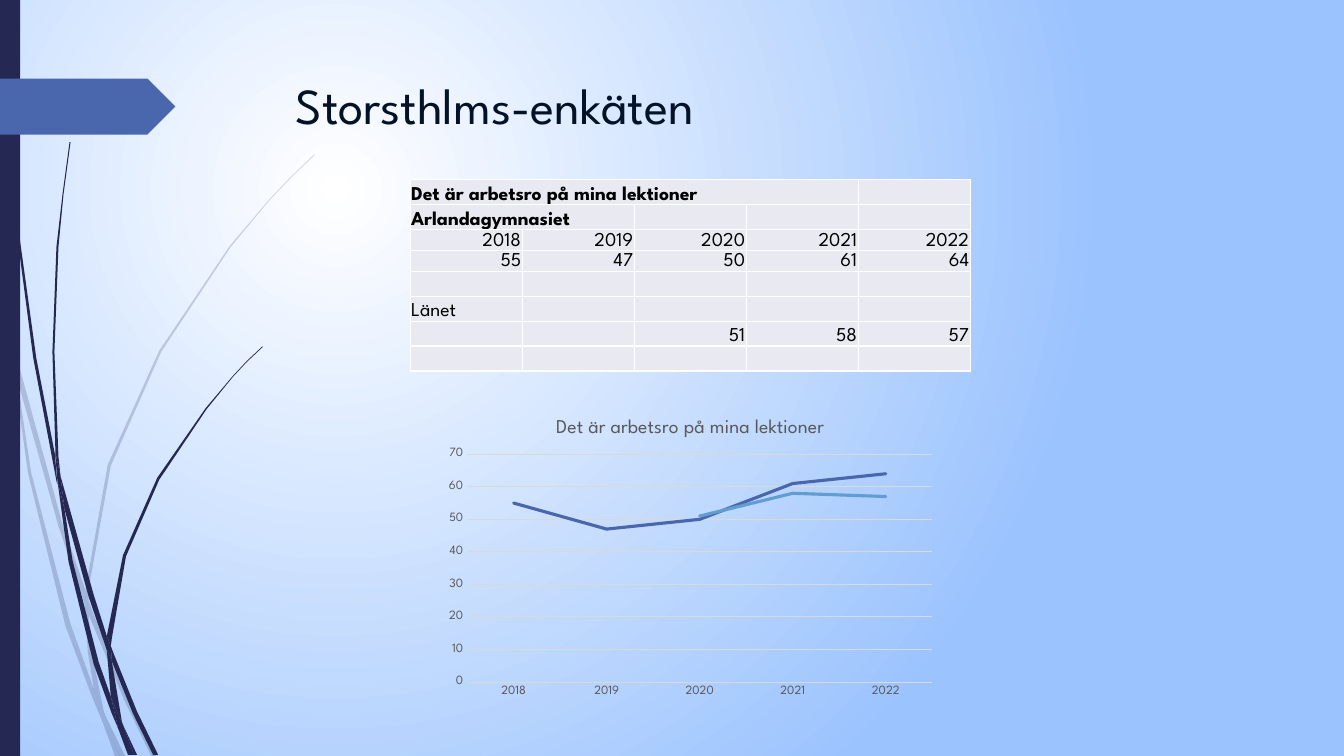
from lxml import etree
from pptx import Presentation
from pptx.chart.data import CategoryChartData
from pptx.dml.color import RGBColor
from pptx.enum.chart import XL_CHART_TYPE, XL_TICK_MARK
from pptx.enum.shapes import MSO_SHAPE
from pptx.enum.text import MSO_ANCHOR, MSO_AUTO_SIZE, PP_ALIGN
from pptx.oxml.ns import qn
from pptx.util import Pt

LEFT, RIGHT = PP_ALIGN.LEFT, PP_ALIGN.RIGHT
TOP, BOTTOM = MSO_ANCHOR.TOP, MSO_ANCHOR.BOTTOM
NO_TICK = XL_TICK_MARK.NONE

# Content
TITLE = "Storsthlms-enkäten"
QUESTION = "Det är arbetsro på mina lektioner"
SCHOOL, COUNTY = "Arlandagymnasiet", "Länet"
YEARS = ["2018", "2019", "2020", "2021", "2022"]
SCORES = {SCHOOL: [55, 47, 50, 61, 64], COUNTY: [None, None, 51, 58, 57]}
EMPTY = [None] * len(YEARS)
ROWS = [[QUESTION] + EMPTY[1:], [SCHOOL] + EMPTY[1:], YEARS, SCORES[SCHOOL],
        EMPTY, [COUNTY] + EMPTY[1:], SCORES[COUNTY], EMPTY]
MERGED = {0: 3, 1: 1}  # row: last column of its heading
BOLD_ROWS = (0, 1)
NUMBER_ROWS = (2, 3, 6)
COMPACT_ROWS = (2, 3)
PLOT = {"x": 20.5, "y": 37.2, "w": 332.3, "h": 162.8}

# Blades of grass: outline corners, in grass units
GRASS_UNIT = Pt(0.72)
PALE_BLADES = [
    [(11, 350), (9, 322), (0, 282), (0, 299), (10, 344)],
    [(58, 522), (84, 599), (85, 586), (62, 520), (14, 345), (17, 376)],
    [(92, 607), (88, 596), (88, 610), (123, 694), (150, 750), (155, 750), (127, 692)],
    [(119, 750), (124, 750), (105, 711)],
    [(93, 683), (70, 619), (31, 469), (17, 376), (11, 350), (28, 470), (65, 621),
     (92, 693), (101, 714), (99, 707)],
    [(84, 599), (87, 646), (93, 683), (96, 692), (105, 711), (103, 706), (91, 646),
     (88, 610), (88, 608)],
    [(88, 584), (110, 462), (160, 349), (229, 245), (268, 198), (290, 175),
     (312, 154), (312, 153), (289, 175), (268, 197), (228, 244), (158, 348),
     (107, 461), (85, 584), (85, 586), (88, 596)],
    [(101, 714), (114, 750), (119, 750)],
    [(88, 608), (88, 610), (88, 596), (85, 586), (84, 599)],
    [(96, 692), (93, 683), (99, 707), (101, 714), (119, 750), (105, 711)],
]
DARK_BLADES = [
    [(7, 110), (17, 233), (33, 355), (56, 477), (57, 481), (55, 457), (55, 453),
     (36, 355), (19, 232), (8, 109), (5, 48), (4, 0), (3, 0), (4, 48)],
    [(88, 592), (106, 645), (106, 633), (106, 631), (93, 590), (60, 472), (64, 505)],
    [(113, 649), (110, 641), (111, 656), (132, 708), (152, 749), (157, 749), (136, 706)],
    [(110, 691), (98, 657), (72, 556), (64, 505), (57, 477), (68, 557), (93, 659),
     (111, 708), (117, 722), (116, 717)],
    [(60, 472), (58, 453), (54, 349), (58, 245), (63, 193), (70, 141), (69, 141),
     (62, 193), (56, 245), (52, 349), (55, 449)],
    [(133, 749), (136, 749), (122, 719)],
    [(57, 477), (64, 505), (60, 472), (55, 449), (55, 453)],
    [(111, 633), (125, 552), (158, 476), (205, 406), (231, 374), (245, 359),
     (261, 344), (260, 344), (245, 358), (231, 373), (204, 405), (156, 474),
     (122, 551), (106, 631), (110, 641)],
    [(117, 722), (127, 749), (131, 749)],
    [(106, 645), (110, 691), (116, 706), (122, 719), (121, 716), (111, 656), (109, 651)],
    [(106, 645), (109, 651), (111, 656), (110, 641), (106, 631), (106, 633)],
    [(116, 706), (110, 691), (116, 717), (117, 722), (130, 749), (133, 749), (122, 719)],
]

THEME = {
    "font": "League Spartan",
    "title": "031227", "text": "000000", "muted": "595959",
    "navy": "242852", "blue": "4A66AC", "sky": "629DD1",
    "cell": "E9EAF1", "grid": "D9D9D9", "white": "FFFFFF", "edge": "9BC3FE",
    "title_size": 36, "table_size": 14, "chart_title_size": 14, "axis_size": 9,
}


def rgb(name):
    return RGBColor.from_string(THEME[name])


def set_font(font, size, color, bold=False):
    font.name, font.size, font.bold = THEME["font"], Pt(THEME[size]), bold
    font.color.rgb = rgb(color)


def write(tf, text, size="table_size", color="text", bold=False, align=LEFT):
    p = tf.paragraphs[0]
    p.alignment = align
    r = p.add_run()
    r.text = text
    set_font(r.font, size, color, bold)


def paint(sp, color, alpha=None):
    sp.shadow.inherit = False
    sp.fill.solid()
    sp.fill.fore_color.rgb = rgb(color)
    sp.line.fill.background()
    if alpha:
        clr = sp.fill._xPr.find(".//" + qn("a:srgbClr"))
        etree.SubElement(clr, qn("a:alpha"), val=str(alpha * 1000))


def add_borders(cell):
    tcPr = cell._tc.get_or_add_tcPr()
    for side in ("a:lnL", "a:lnR", "a:lnT", "a:lnB"):
        ln = etree.SubElement(tcPr, qn(side), w=str(Pt(1)))
        fill = etree.SubElement(ln, qn("a:solidFill"))
        etree.SubElement(fill, qn("a:srgbClr"), val=THEME["white"])


prs = Presentation()
prs.slide_width, prs.slide_height = Pt(960), Pt(540)
s = prs.slides.add_slide(prs.slide_layouts[5])

# Background glow
glow = s.background.fill
glow.gradient()
for stop, color in zip(glow.gradient_stops, ("white", "edge")):
    stop.color.rgb = rgb(color)
grad = s.element.find(".//" + qn("a:gradFill"))
grad.remove(grad.find(qn("a:lin")))
circle = etree.SubElement(grad, qn("a:path"), path="circle")
etree.SubElement(circle, qn("a:fillToRect"),
                 l="50000", t="50000", r="100000", b="100000")

# Grass, side bar and arrow tab
for blades, alpha in ((PALE_BLADES, 20), (DARK_BLADES, None)):
    for corners in blades:
        builder = s.shapes.build_freeform(*corners[0], scale=GRASS_UNIT)
        builder.add_line_segments(corners[1:], close=True)
        paint(builder.convert_to_shape(), "navy", alpha)
bar = s.shapes.add_shape(MSO_SHAPE.RECTANGLE, 0, 0, Pt(14.4), Pt(540))
paint(bar, "navy")
tab = s.shapes.add_shape(MSO_SHAPE.PENTAGON, 0, Pt(56.2), Pt(125.3), Pt(39.9))
paint(tab, "blue")

# Title
title = s.shapes.title
title.left, title.top, title.width, title.height = Pt(204), Pt(49), Pt(702), Pt(100.8)
tf = title.text_frame
tf.word_wrap, tf.auto_size, tf.vertical_anchor = True, MSO_AUTO_SIZE.NONE, TOP
write(tf, TITLE, "title_size", "title")

# Table
table = s.shapes.add_table(len(ROWS), len(YEARS), Pt(293), Pt(128.3),
                           Pt(400), Pt(137)).table
for column in table.columns:
    column.width = Pt(80)
for i, values in enumerate(ROWS):
    table.rows[i].height = Pt(14.9 if i in COMPACT_ROWS else 17.85)
    for j, value in enumerate(values):
        cell = table.cell(i, j)
        cell.margin_left = cell.margin_right = cell.margin_top = Pt(0.72)
        cell.margin_bottom = 0
        cell.vertical_anchor = BOTTOM
        add_borders(cell)
        cell.fill.solid()
        cell.fill.fore_color.rgb = rgb("cell")
        if value is None:
            etree.SubElement(cell.text_frame.paragraphs[0]._p,
                             qn("a:endParaRPr"), sz=str(THEME["table_size"] * 100))
        else:
            write(cell.text_frame, str(value), bold=i in BOLD_ROWS,
                  align=RIGHT if i in NUMBER_ROWS else LEFT)
for i, last in MERGED.items():
    table.cell(i, 0).merge(table.cell(i, last))

# Line chart
data = CategoryChartData()
data.categories = YEARS
for name, values in SCORES.items():
    data.add_series(name, values)
chart_w, chart_h = 360, 216
chart = s.shapes.add_chart(XL_CHART_TYPE.LINE, Pt(313.2), Pt(287.3),
                           Pt(chart_w), Pt(chart_h), data).chart
chart.has_legend = False
chart.has_title = True
write(chart.chart_title.text_frame, QUESTION, "chart_title_size", "muted")
chart.chart_title.include_in_layout = False
for series, color in zip(chart.plots[0].series, ("blue", "sky")):
    series.smooth = False
    series.format.line.width = Pt(2.25)
    series.format.line.color.rgb = rgb(color)
    series.format.line._get_or_add_ln().set("cap", "rnd")
years, scale = chart.category_axis, chart.value_axis
for axis in (years, scale):
    axis.major_tick_mark = axis.minor_tick_mark = NO_TICK
    set_font(axis.tick_labels.font, "axis_size", "muted")
scale.minimum_scale, scale.maximum_scale, scale.major_unit = 0, 70, 10
scale.has_major_gridlines = True
scale.format.line.fill.background()
for line in (years.format.line, scale.major_gridlines.format.line):
    line.width = Pt(0.75)
    line.color.rgb = rgb("grid")

# Plot area inside the chart
area = chart._chartSpace.find(".//" + qn("c:plotArea"))
for old in area.findall(qn("c:layout")):
    area.remove(old)
layout = etree.Element(qn("c:layout"))
area.insert(0, layout)
manual = etree.SubElement(layout, qn("c:manualLayout"))
settings = {"layoutTarget": "inner", "xMode": "edge", "yMode": "edge"}
for side, length in PLOT.items():
    settings[side] = str(length / (chart_w if side in "xw" else chart_h))
for tag, val in settings.items():
    etree.SubElement(manual, qn("c:" + tag), val=val)

prs.save("out.pptx")
